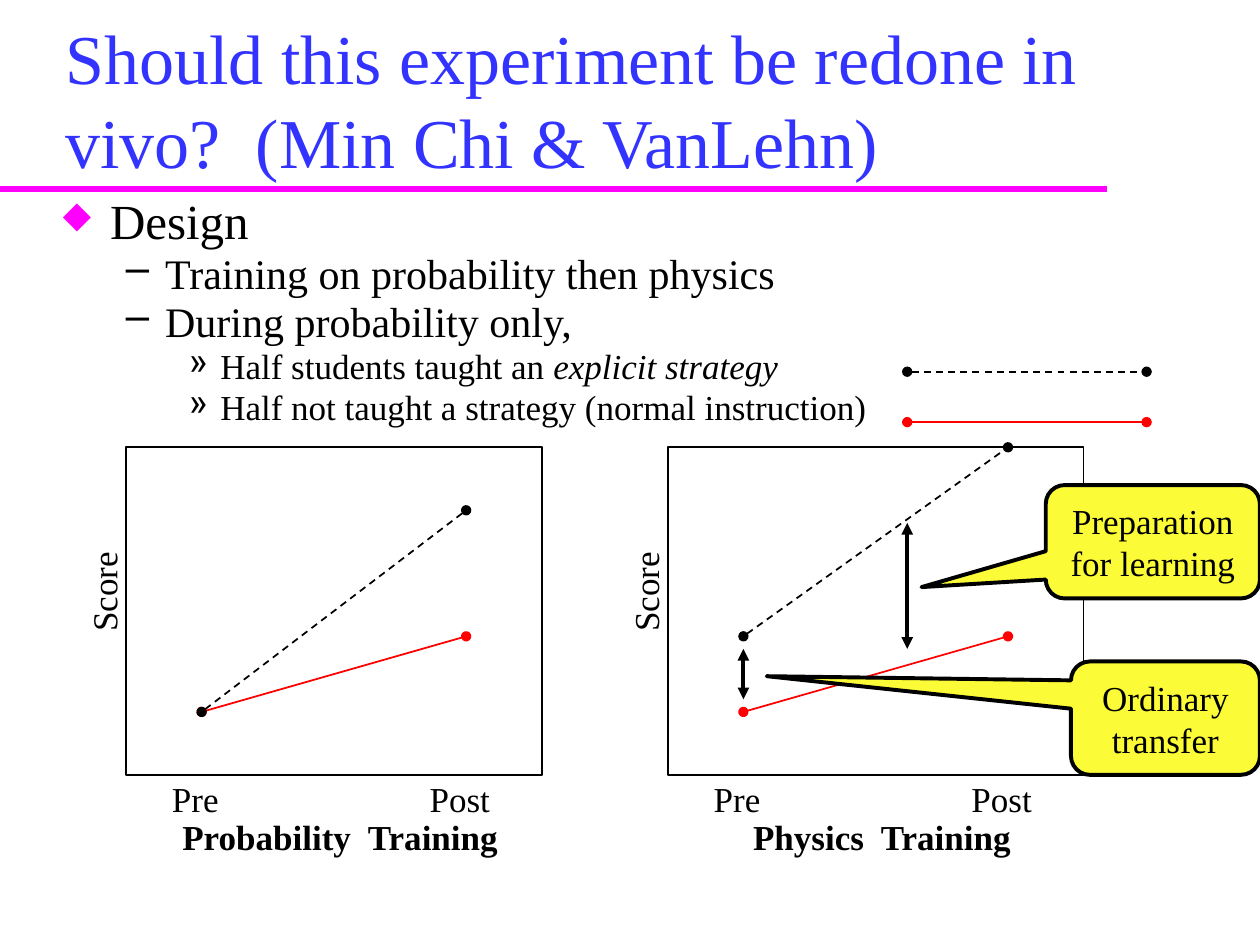
"""Build the slide on redoing the probability and physics training experiment."""
from dataclasses import dataclass

from lxml import etree
from pptx import Presentation
from pptx.dml.color import RGBColor
from pptx.enum.dml import MSO_LINE
from pptx.enum.shapes import MSO_CONNECTOR, MSO_SHAPE
from pptx.enum.text import MSO_ANCHOR, MSO_AUTO_SIZE, PP_ALIGN
from pptx.oxml.ns import qn
from pptx.util import Pt

STRAIGHT = MSO_CONNECTOR.STRAIGHT
RECTANGLE = MSO_SHAPE.RECTANGLE
CALLOUT = MSO_SHAPE.ROUNDED_RECTANGULAR_CALLOUT
DASH = MSO_LINE.DASH
TOP, MIDDLE, BOTTOM = MSO_ANCHOR.TOP, MSO_ANCHOR.MIDDLE, MSO_ANCHOR.BOTTOM
LEFT, CENTER = PP_ALIGN.LEFT, PP_ALIGN.CENTER
NO_AUTOFIT = MSO_AUTO_SIZE.NONE
FONT = "Times New Roman"
BLACK, RED, BLUE, MAGENTA, YELLOW = "000000", "FF0000", "3333FF", "FF00FF", "FBFB37"
PANEL_TOP, PANEL_WIDTH, PANEL_HEIGHT = 255.6, 237.6, 187.2
PRE_OFFSET, POST_OFFSET = 43.2, 194.4


@dataclass
class Level:
    margin: float
    hanging: float
    size: float
    bullet: str
    bullet_color: str = BLACK
    bullet_percent: int = 100


@dataclass
class Item:
    level: Level
    text: str
    emphasis: str = ""


@dataclass
class Series:
    color: str
    pre: float
    post: float
    dash: bool = False


@dataclass
class Panel:
    left: float
    caption: str
    series: list[Series]


@dataclass
class Note:
    text: str
    left: float
    top: float
    width: float
    pointer: tuple[float, float]
    arrow_x: float
    arrow_top: float
    arrow_bottom: float


MAIN = Level(27, 27, 28, "◆", MAGENTA, 75)
SUB = Level(58.5, 22.5, 24, "–")
DETAIL = Level(90, 18, 20, "»")
ITEMS = [
    Item(MAIN, "Design"),
    Item(SUB, "Training on probability then physics"),
    Item(SUB, "During probability only,"),
    Item(DETAIL, "Half students taught an ", "explicit strategy"),
    Item(DETAIL, "Half not taught a strategy (normal instruction)"),
]
PANELS = [
    Panel(72, "Probability  Training",
          [Series(RED, 406.8, 363.6), Series(BLACK, 406.8, 291.6, True)]),
    Panel(381.6, "Physics  Training",
          [Series(RED, 406.8, 363.6), Series(BLACK, 363.6, 255.6, True)]),
]
LEGEND = [Series(BLACK, 212.4, 212.4, True), Series(RED, 241.2, 241.2)]
NOTES = [
    Note("Preparation for learning", 597.6, 277.2, 122.4, (-1.08, 0.4), 518.4, 298.8, 370.8),
    Note("Ordinary transfer", 612, 378, 108, (-2.11, -0.37), 424.8, 370.8, 399.6),
]


def rgb(value: str) -> RGBColor:
    """Turn a hex string into a colour."""
    return RGBColor.from_string(value)


def write(frame, text: str, *, size: float = 20, color: str = BLACK, bold: bool = False,
          align=CENTER, anchor=TOP) -> None:
    """Fill a text frame with one formatted paragraph."""
    frame.word_wrap = True
    frame.auto_size = NO_AUTOFIT
    frame.vertical_anchor = anchor
    paragraph = frame.paragraphs[0]
    paragraph.text = text
    paragraph.alignment = align
    font = paragraph.font
    font.name, font.size, font.bold = FONT, Pt(size), bold
    font.color.rgb = rgb(color)


def add_label(slide, text: str, left: float, top: float, width: float, *,
              bold: bool = False, rotation: float = 0) -> None:
    """Add a centred label."""
    box = slide.shapes.add_textbox(Pt(left), Pt(top), Pt(width), Pt(30.96))
    box.rotation = rotation
    write(box.text_frame, text, bold=bold)


def add_line(slide, start: tuple[float, float], end: tuple[float, float], color: str,
             width: float = 1, ends: str = "", dash: bool = False) -> None:
    """Add a straight line with the same marker at both ends."""
    line = slide.shapes.add_connector(STRAIGHT, *(Pt(value) for value in start + end))
    line.line.color.rgb = rgb(color)
    line.line.width = Pt(width)
    if dash:
        line.line.dash_style = DASH
    if ends:
        outline = line.line._get_or_add_ln()
        for tag in ("a:headEnd", "a:tailEnd"):
            etree.SubElement(outline, qn(tag), type=ends)
    etree.SubElement(line._element.spPr, qn("a:effectLst"))


def add_series(slide, series: Series, left: float, right: float) -> None:
    """Draw one series between its two points."""
    add_line(slide, (left, series.pre), (right, series.post), series.color,
             ends="oval", dash=series.dash)


def add_outlined(slide, kind, left: float, top: float, width: float, height: float,
                 line_width: float, fill: str = ""):
    """Add a black-outlined shape with an optional fill."""
    shape = slide.shapes.add_shape(kind, Pt(left), Pt(top), Pt(width), Pt(height))
    shape.shadow.inherit = False
    shape.line.color.rgb = rgb(BLACK)
    shape.line.width = Pt(line_width)
    if fill:
        shape.fill.solid()
        shape.fill.fore_color.rgb = rgb(fill)
    else:
        shape.fill.background()
    return shape


def add_bullet(paragraph, level: Level) -> None:
    """Give a paragraph the indent and bullet of its level."""
    properties = paragraph._p.get_or_add_pPr()
    properties.set("marL", str(Pt(level.margin)))
    properties.set("indent", str(-Pt(level.hanging)))
    color = etree.SubElement(properties, qn("a:buClr"))
    etree.SubElement(color, qn("a:srgbClr"), val=level.bullet_color)
    etree.SubElement(properties, qn("a:buSzPct"), val=str(level.bullet_percent * 1000))
    etree.SubElement(properties, qn("a:buChar"), char=level.bullet)


def add_items(slide, items: list[Item]) -> None:
    """Add the bulleted design outline."""
    frame = slide.shapes.add_textbox(Pt(28.8), Pt(111.6), Pt(504), Pt(144)).text_frame
    frame.word_wrap = True
    for index, item in enumerate(items):
        paragraph = frame.add_paragraph() if index else frame.paragraphs[0]
        add_bullet(paragraph, item.level)
        paragraph.line_spacing = 0.8
        paragraph.space_before = Pt(0.2 * item.level.size if index else 0)
        paragraph.font.name, paragraph.font.size = FONT, Pt(item.level.size)
        paragraph.font.color.rgb = rgb(BLACK)
        paragraph.add_run().text = item.text
        if item.emphasis:
            run = paragraph.add_run()
            run.text = item.emphasis
            run.font.italic = True


def add_panel(slide, panel: Panel) -> None:
    """Draw one score plot with its labels."""
    left = panel.left
    add_outlined(slide, RECTANGLE, left, PANEL_TOP, PANEL_WIDTH, PANEL_HEIGHT, 1)
    for series in panel.series:
        add_series(slide, series, left + PRE_OFFSET, left + POST_OFFSET)
    for text, offset in (("Pre", PRE_OFFSET), ("Post", POST_OFFSET)):
        add_label(slide, text, left + offset - 36, 440.64, 64.8)
    add_label(slide, panel.caption, left - 7.2, 462.24, 259.2, bold=True)
    add_label(slide, "Score", left - 59.76, 322.56, 93.6, rotation=270)


def add_note(slide, note: Note) -> None:
    """Draw a callout and the gap arrow it explains."""
    shape = add_outlined(slide, CALLOUT, note.left, note.top, note.width, 64.8, 2.25, YELLOW)
    shape.adjustments[0], shape.adjustments[1] = note.pointer
    write(shape.text_frame, note.text, anchor=MIDDLE)
    add_line(slide, (note.arrow_x, note.arrow_top), (note.arrow_x, note.arrow_bottom),
             BLACK, 2.25, "triangle")


def main() -> None:
    """Build and save the slide."""
    presentation = Presentation()
    presentation.slide_width, presentation.slide_height = Pt(720), Pt(540)
    slide = presentation.slides.add_slide(presentation.slide_layouts[5])
    add_line(slide, (0, 108), (632.4, 108), MAGENTA, 4)
    title = slide.shapes.title
    title.left, title.top, title.width, title.height = Pt(30.24), Pt(20.88), Pt(612), Pt(87.12)
    write(title.text_frame, "Should this experiment be redone in vivo?  (Min Chi & VanLehn)",
          size=40, color=BLUE, align=LEFT, anchor=BOTTOM)
    add_items(slide, ITEMS)
    add_panel(slide, PANELS[0])
    for series in LEGEND:
        add_series(slide, series, 518.4, 655.2)
    add_panel(slide, PANELS[1])
    for note in NOTES:
        add_note(slide, note)
    presentation.save("out.pptx")


if __name__ == "__main__":
    main()
